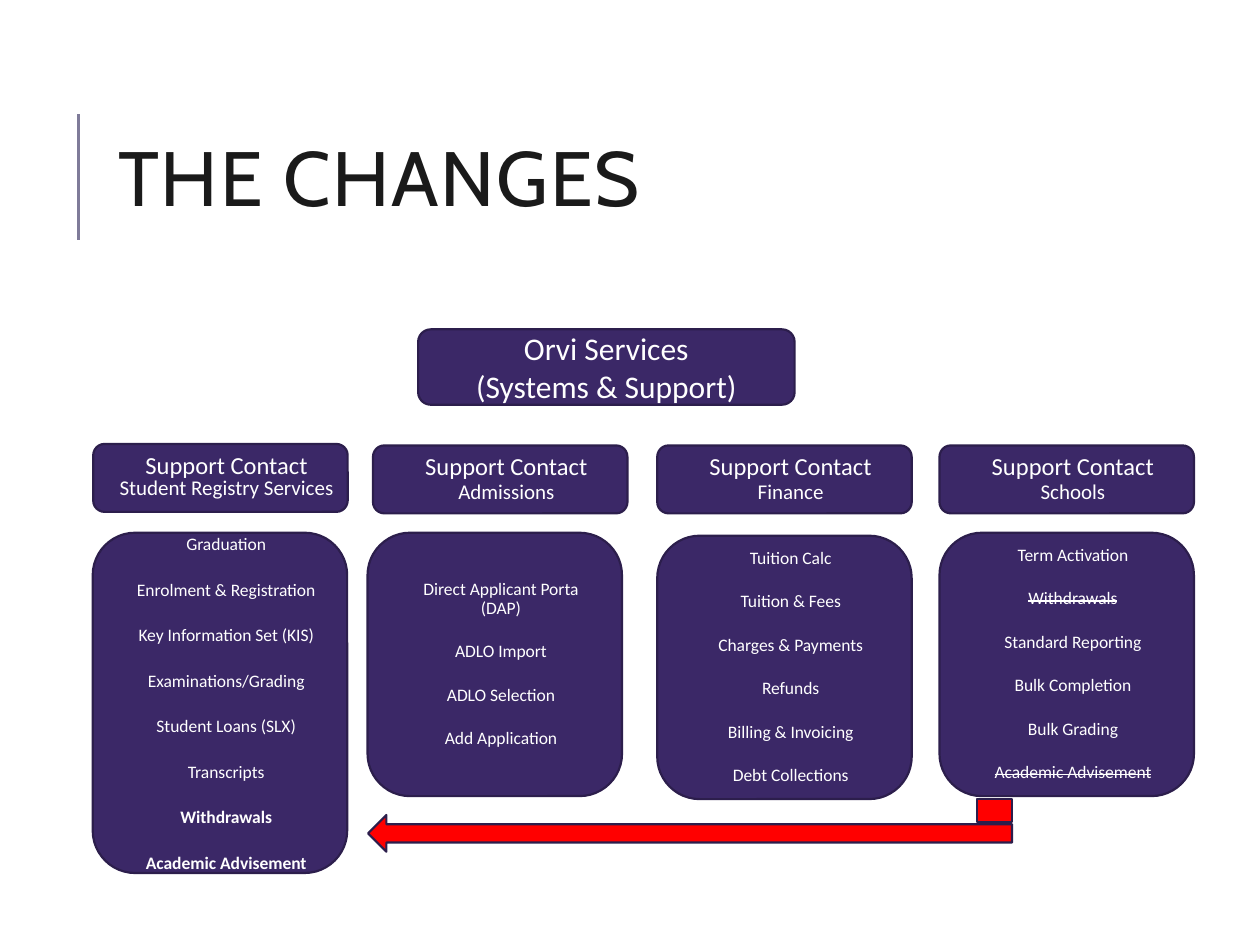
from dataclasses import dataclass, field

import pptx
import pptx.dml.color
import pptx.enum.shapes
import pptx.enum.text
import pptx.oxml.ns
import pptx.util
from lxml import etree

Cm, Pt = pptx.util.Cm, pptx.util.Pt
MSO_SHAPE = pptx.enum.shapes.MSO_SHAPE
PP_ALIGN = pptx.enum.text.PP_ALIGN
qn = pptx.oxml.ns.qn

COLORS = {"purple": "3B2867", "edge": "2C1E4C", "rule": "7F7B99",
          "title": "1A1A1A", "text": "FFFFFF", "arrow": "FF0000"}
COLUMN_W, HEADER_H = 5.13, 1.37


@dataclass
class Box:
    left: float
    top: float
    width: float
    height: float

    def lengths(self) -> tuple:
        return Cm(self.left), Cm(self.top), Cm(self.width), Cm(self.height)


@dataclass
class Run:
    text: str
    size: float = 10
    bold: bool = False
    strike: bool = False


@dataclass
class Column:
    contact: str
    header: Box
    panel: Box
    items: list[str]
    bold: set[str] = field(default_factory=set)
    struck: set[str] = field(default_factory=set)
    header_spacing: float = 0.9
    panel_spacing: float = 0.9


COLUMNS = [
    Column("Student Registry Services",
           Box(1.88, 8.95, COLUMN_W, HEADER_H), Box(1.87, 10.74, COLUMN_W, 6.86),
           ["Graduation", "Enrolment & Registration", "Key Information Set (KIS)",
            "Examinations/Grading", "Student Loans (SLX)", "Transcripts",
            "Withdrawals", "Academic Advisement"],
           bold={"Withdrawals", "Academic Advisement"},
           header_spacing=0.8, panel_spacing=1.0),
    Column("Admissions",
           Box(7.52, 8.98, COLUMN_W, HEADER_H), Box(7.41, 10.74, COLUMN_W, 5.31),
           ["Direct Applicant Porta (DAP)", "ADLO Import", "ADLO Selection",
            "Add Application"]),
    Column("Finance",
           Box(13.25, 8.98, COLUMN_W, HEADER_H), Box(13.25, 10.8, COLUMN_W, 5.31),
           ["Tuition Calc", "Tuition & Fees", "Charges & Payments", "Refunds",
            "Billing & Invoicing", "Debt Collections"]),
    Column("Schools",
           Box(18.94, 8.98, COLUMN_W, HEADER_H), Box(18.94, 10.74, COLUMN_W, 5.31),
           ["Term Activation", "Withdrawals", "Standard Reporting",
            "Bulk Completion", "Bulk Grading", "Academic Advisement"],
           struck={"Withdrawals", "Academic Advisement"}),
]


def rgb(name: str) -> pptx.dml.color.RGBColor:
    return pptx.dml.color.RGBColor.from_string(COLORS[name])


def place(sp, box: Box) -> None:
    sp.left, sp.top, sp.width, sp.height = box.lengths()


def paint(sp, fill: str) -> None:
    sp.fill.solid()
    sp.fill.fore_color.rgb = rgb(fill)
    sp.line.color.rgb = rgb("edge")
    sp.line.width = Pt(1.25)
    sp.shadow.inherit = False


def add_box(s, kind, box: Box, fill: str = "purple"):
    sp = s.shapes.add_shape(kind, *box.lengths())
    paint(sp, fill)
    return sp


def write(sp, paragraphs: list[list[Run]], spacing: float | None = None) -> None:
    """Write centred text; a line spacing marks it as hanging list text."""
    tf = sp.text_frame
    tf.word_wrap = True
    tf.auto_size = pptx.enum.text.MSO_AUTO_SIZE.NONE
    tf.vertical_anchor = pptx.enum.text.MSO_ANCHOR.MIDDLE
    for i, runs in enumerate(paragraphs):
        p = tf.add_paragraph() if i else tf.paragraphs[0]
        p.alignment = PP_ALIGN.CENTER
        if spacing:
            p.line_spacing = spacing
            p.space_before, p.space_after = Pt(12), Pt(2)
            pPr = p._p.get_or_add_pPr()
            pPr.set("marL", str(Cm(0.25)))
            pPr.set("indent", str(-Cm(0.25)))
            etree.SubElement(pPr, qn("a:buChar")).set("char", " ")
        for run in runs:
            r = p.add_run()
            r.text = run.text
            r.font.name, r.font.size, r.font.bold = "Calibri", Pt(run.size), run.bold
            r.font.color.rgb = rgb("text")
            if run.strike:
                r._r.get_or_add_rPr().set("strike", "sngStrike")


def add_title(s, text: str) -> None:
    sp = s.shapes.title
    place(sp, Box(2.13, 1.63, 20.24, 4.17))
    tf = sp.text_frame
    tf.vertical_anchor = pptx.enum.text.MSO_ANCHOR.MIDDLE
    p = tf.paragraphs[0]
    p.alignment, p.line_spacing = PP_ALIGN.LEFT, 0.8
    r = p.add_run()
    r.text = text
    r.font.name, r.font.size = "Cabin", Pt(44)
    r.font.color.rgb = rgb("title")
    r._r.get_or_add_rPr().set("spc", "100")

    # Rule beside the title
    rule = s.shapes.add_connector(pptx.enum.shapes.MSO_CONNECTOR.STRAIGHT,
                                  Cm(1.58), Cm(4.83), Cm(1.58), Cm(2.29))
    rule.line.color.rgb = rgb("rule")
    rule.line.width = Pt(1.5)
    etree.SubElement(rule._element.spPr, qn("a:effectLst"))


def round_body(s, box: Box):
    """Turn the body placeholder into a rounded box."""
    sp = s.placeholders[1]
    place(sp, box)
    geom = etree.SubElement(sp._element.spPr, qn("a:prstGeom"), prst="roundRect")
    etree.SubElement(geom, qn("a:avLst"))
    paint(sp, "purple")
    tf = sp.text_frame
    tf.margin_left = tf.margin_right = tf.margin_top = tf.margin_bottom = Cm(0.13)
    return sp


def add_column(s, column: Column, header) -> None:
    write(header, [[Run("Support Contact ", 14), Run(column.contact, 12)]],
          column.header_spacing)
    panel = add_box(s, MSO_SHAPE.ROUNDED_RECTANGLE, column.panel)
    write(panel, [[Run(item, bold=item in column.bold, strike=item in column.struck)]
                  for item in column.items], column.panel_spacing)


def main() -> None:
    prs = pptx.Presentation()
    prs.slide_width, prs.slide_height = Cm(25.4), Cm(19.05)
    s = prs.slides.add_slide(prs.slide_layouts[1])
    add_title(s, "THE CHANGES")

    # Top of the support tree
    top = add_box(s, MSO_SHAPE.ROUNDED_RECTANGLE, Box(8.43, 6.64, 7.59, 1.52))
    write(top, [[Run("Orvi Services", 18)], [Run("(Systems & Support)", 18)]])

    # Support contacts and their services; the first header is the body
    for i, column in enumerate(COLUMNS):
        header = (add_box(s, MSO_SHAPE.ROUNDED_RECTANGLE, column.header) if i
                  else round_body(s, column.header))
        add_column(s, column, header)

    # Arrow for the services that move from schools to the registry
    add_box(s, MSO_SHAPE.LEFT_ARROW, Box(7.42, 16.43, 12.98, 0.74), "arrow")
    add_box(s, MSO_SHAPE.RECTANGLE, Box(19.69, 16.1, 0.71, 0.48), "arrow")

    prs.save("out.pptx")


if __name__ == "__main__":
    main()
